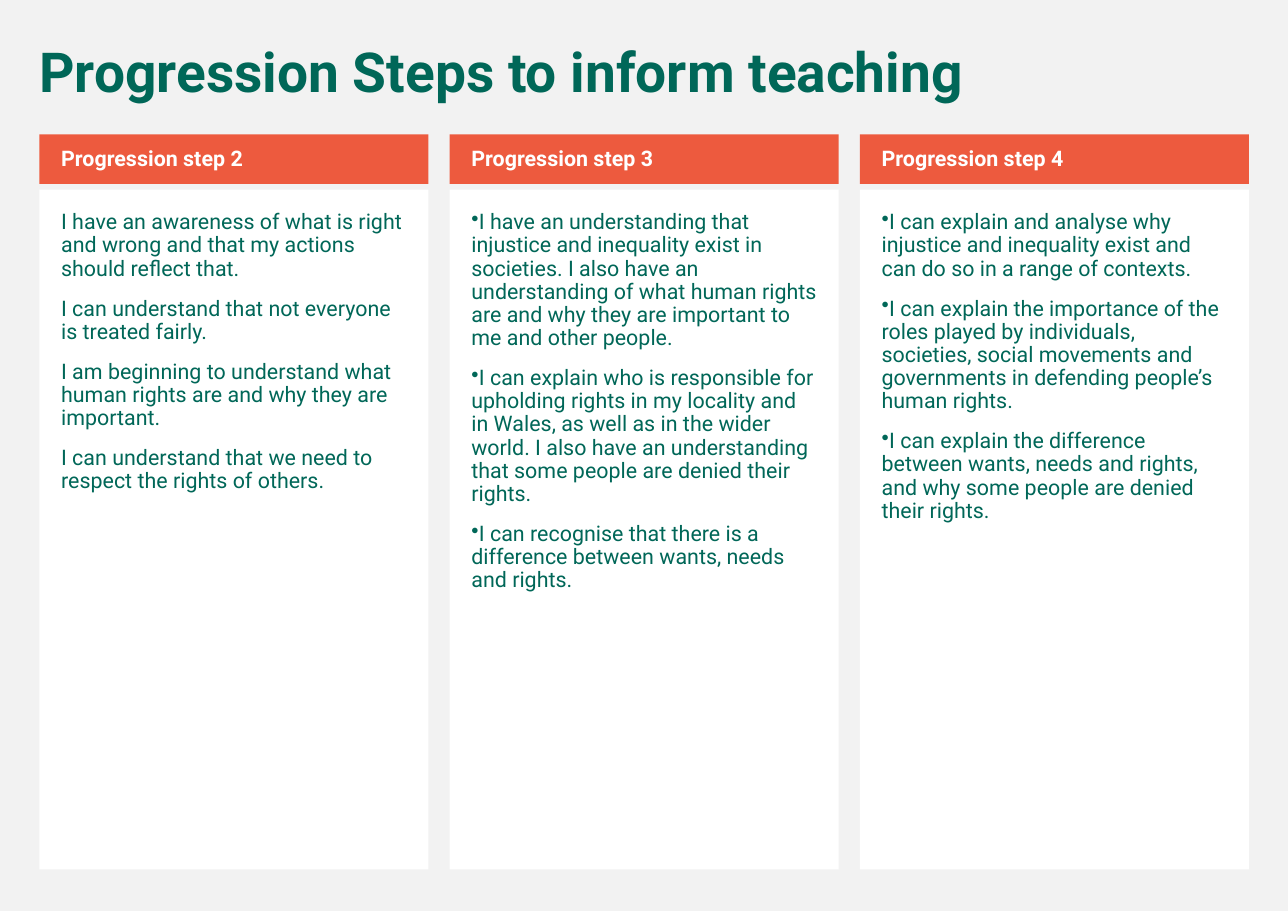
from lxml.etree import SubElement
from pptx import Presentation
from pptx.dml.color import RGBColor
from pptx.enum.shapes import MSO_SHAPE
from pptx.enum.text import MSO_ANCHOR, PP_ALIGN
from pptx.oxml.ns import qn
from pptx.util import Cm, Pt

GREEN = "006758"
ORANGE = "ED5A3E"
WHITE = "FFFFFF"
GREY = "F2F2F2"

COLUMN_LEFT = 0.91
COLUMN_PITCH = 9.46
COLUMN_WIDTH = 8.97

STEPS = [
    ("Progression step 2", False, [
        "I have an awareness of what is right and wrong and that my actions should reflect that.",
        "I can understand that not everyone is treated fairly.",
        "I am beginning to understand what human rights are and why they are important.",
        "I can understand that we need to respect the rights of others.",
    ]),
    ("Progression step 3", True, [
        "I have an understanding that injustice and inequality exist in societies. "
        "I also have an understanding of what human rights are and why they are "
        "important to me and other people.",
        "I can explain who is responsible for upholding rights in my locality and in "
        "Wales, as well as in the wider world. I also have an understanding that some "
        "people are denied their rights.",
        "I can recognise that there is a difference between wants, needs and rights.",
    ]),
    ("Progression step 4", True, [
        "I can explain and analyse why injustice and inequality exist and can do so "
        "in a range of contexts.",
        "I can explain the importance of the roles played by individuals, societies, "
        "social movements and governments in defending people’s human rights.",
        "I can explain the difference between wants, needs and rights, and why some "
        "people are denied their rights.",
    ]),
]


def paint(color_format, hex_color):
    color_format.rgb = RGBColor.from_string(hex_color)


def add_bullet(paragraph):
    properties = paragraph._p.get_or_add_pPr()
    properties.set("marL", "0")
    properties.set("indent", "0")
    SubElement(properties, qn("a:buChar")).set("char", "•")


def write(frame, statements, size, color, bold=False, bulleted=False):
    frame.word_wrap = True
    for index, statement in enumerate(statements):
        paragraph = frame.add_paragraph() if index else frame.paragraphs[0]
        paragraph.text = statement
        paragraph.alignment = PP_ALIGN.LEFT
        paragraph.line_spacing = 0.9
        paragraph.space_before = Pt(11)
        paragraph.font.name = "Roboto"
        paragraph.font.size = Pt(size)
        paragraph.font.bold = bold
        paint(paragraph.font.color, color)
        if bulleted:
            add_bullet(paragraph)


def add_panel(slide, left, top, height, fill, anchor, insets):
    panel = slide.shapes.add_shape(
        MSO_SHAPE.RECTANGLE, Cm(left), Cm(top), Cm(COLUMN_WIDTH), Cm(height))
    panel.shadow.inherit = False
    panel.fill.solid()
    paint(panel.fill.fore_color, fill)
    panel.line.fill.background()
    frame = panel.text_frame
    frame.vertical_anchor = anchor
    (frame.margin_left, frame.margin_top,
     frame.margin_right, frame.margin_bottom) = map(Cm, insets)
    return frame


def add_step(slide, left, heading, bulleted, statements):
    body = add_panel(slide, left, 4.37, 15.67, WHITE, MSO_ANCHOR.TOP,
                     (0.5, 0.5, 0.5, 0.5))
    write(body, statements, 14, GREEN, bulleted=bulleted)
    header = add_panel(slide, left, 3.1, 1.14, ORANGE, MSO_ANCHOR.MIDDLE,
                       (0.5, 0.13, 0.25, 0.13))
    write(header, [heading], 14, WHITE, bold=True)


def add_title(slide, title):
    title_box = slide.shapes.add_textbox(Cm(0.66), Cm(0.91), Cm(28.14), Cm(1.65))
    write(title_box.text_frame, [title], 36, GREEN, bold=True)


def main():
    presentation = Presentation()
    presentation.slide_width = Cm(29.7)
    presentation.slide_height = Cm(21)
    slide = presentation.slides.add_slide(presentation.slide_layouts[6])
    slide.background.fill.solid()
    paint(slide.background.fill.fore_color, GREY)
    for column, (heading, bulleted, statements) in enumerate(STEPS):
        left = COLUMN_LEFT + column * COLUMN_PITCH
        add_step(slide, left, heading, bulleted, statements)
    add_title(slide, "Progression Steps to inform teaching")
    presentation.save("out.pptx")


if __name__ == "__main__":
    main()
